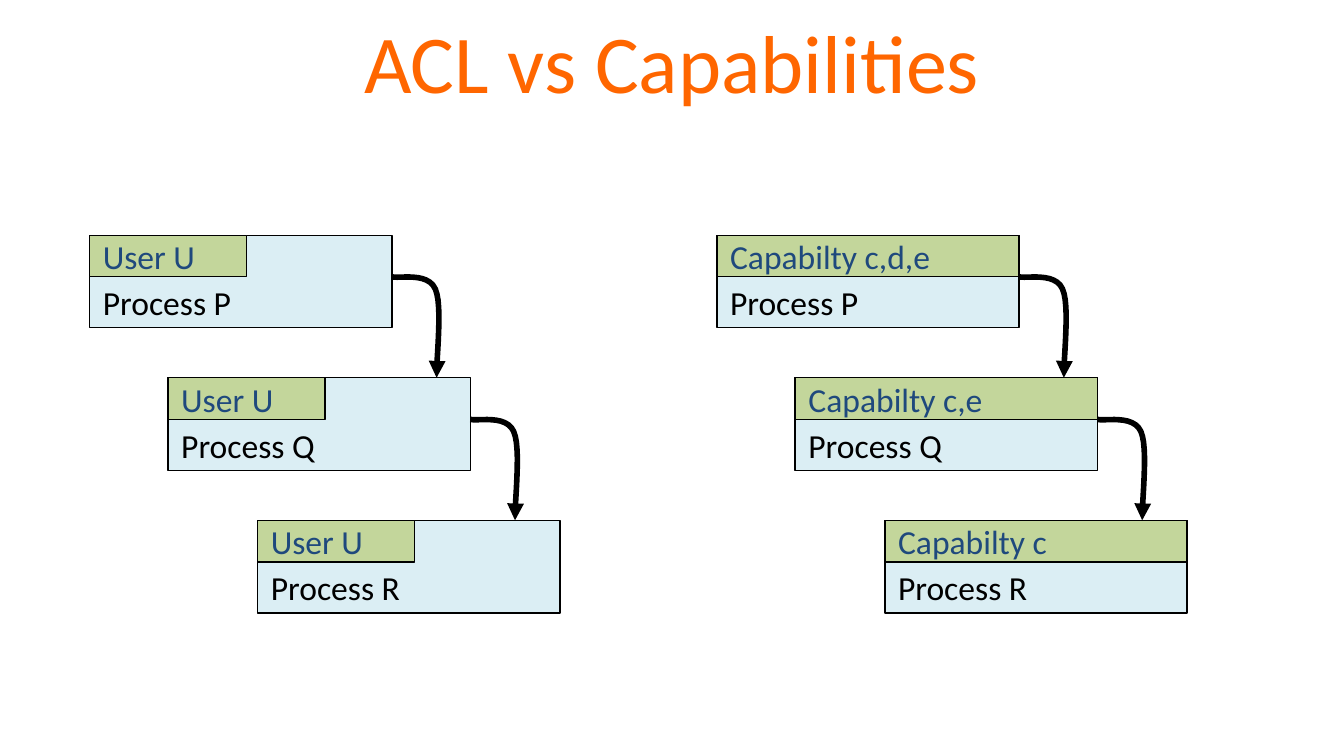
from collections import namedtuple
from lxml.etree import SubElement
from pptx import Presentation
from pptx.dml.color import RGBColor
from pptx.enum.shapes import MSO_SHAPE
from pptx.enum.text import MSO_ANCHOR, PP_ALIGN
from pptx.oxml.ns import qn
from pptx.util import Inches, Pt

ORANGE = RGBColor(0xFF, 0x66, 0x00)
PALE_BLUE = RGBColor(0xDB, 0xEE, 0xF4)
GREEN = RGBColor(0xC3, 0xD6, 0x9B)
NAVY = RGBColor(0x1F, 0x49, 0x7D)
BLACK = RGBColor(0, 0, 0)

Box = namedtuple("Box", "left top width height")
PAGE_WIDTH = 10
PAGE_HEIGHT = PAGE_WIDTH * 9 / 16
BLOCK_WIDTH, BLOCK_HEIGHT = 9 / 14, 0.245
HEADER_HEIGHT = 0.45
INDENTS = (0, 1 / 6, 5 / 14)
PROCESSES = ("Process P", "Process Q", "Process R")
ARROW_WIDTH = 0.095
ARROW_CURVES = (
    ((0, 0), (0.16, 0.02), (0.8, -0.05), (0.97, 0.12)),
    ((0.97, 0.12), (1.14, 0.28), (0.99, 0.81), (1, 1)),
)
CURVE_STEPS = 12


def part(box, left, top, width, height):
    return Box(box.left + left * box.width, box.top + top * box.height,
               width * box.width, height * box.height)


def lengths(box):
    return [Inches(value) for value in box]


def write(shape, text, size, color, align, anchor):
    frame = shape.text_frame
    frame.text = text
    frame.vertical_anchor = anchor
    para = frame.paragraphs[0]
    para.alignment = align
    span = para.runs[0]
    span.font.name = "Calibri"
    span.font.size = Pt(size)
    span.font.color.rgb = color


def add_title(page, box):
    title = page.shapes.add_textbox(*lengths(box))
    title.text_frame.word_wrap = True
    write(title, "ACL vs Capabilities", 44, ORANGE, PP_ALIGN.CENTER, MSO_ANCHOR.MIDDLE)


def add_panel(page, box, text, fill, color, anchor):
    panel = page.shapes.add_shape(MSO_SHAPE.RECTANGLE, *lengths(box))
    panel.shadow.inherit = False
    panel.fill.solid()
    panel.fill.fore_color.rgb = fill
    panel.line.color.rgb = BLACK
    panel.line.width = Pt(0.75)
    panel.text_frame.margin_bottom = Inches(0.04)
    panel.text_frame.margin_top = Inches(0.04)
    write(panel, text, 18, color, PP_ALIGN.LEFT, anchor)
    return panel


def add_block(page, box, process, header, header_width):
    add_panel(page, box, process, PALE_BLUE, BLACK, MSO_ANCHOR.BOTTOM)
    label = add_panel(page, part(box, 0, 0, header_width, HEADER_HEIGHT),
                      header, GREEN, NAVY, MSO_ANCHOR.MIDDLE)
    label.text_frame.word_wrap = False


def curve_point(curve, t):
    weights = ((1 - t) ** 3, 3 * t * (1 - t) ** 2, 3 * t * t * (1 - t), t ** 3)
    return [sum(weight * point[axis] for weight, point in zip(weights, curve))
            for axis in (0, 1)]


def add_arrow(page, box):
    shares = [curve_point(curve, step / CURVE_STEPS)
              for curve in ARROW_CURVES for step in range(1, CURVE_STEPS + 1)]
    points = [(Inches(box.left + x * box.width), Inches(box.top + y * box.height))
              for x, y in shares]
    builder = page.shapes.build_freeform(Inches(box.left), Inches(box.top))
    builder.add_line_segments(points, close=False)
    arrow = builder.convert_to_shape()
    arrow.shadow.inherit = False
    arrow.fill.background()
    arrow.line.color.rgb = BLACK
    arrow.line.width = Pt(3)
    SubElement(arrow.line._get_or_add_ln(), qn("a:tailEnd"), type="triangle")


def add_chain(page, box, headers, header_width):
    row_step = (1 - BLOCK_HEIGHT) / (len(PROCESSES) - 1)
    arrow_top = HEADER_HEIGHT * BLOCK_HEIGHT
    for row, (indent, process, header) in enumerate(zip(INDENTS, PROCESSES, headers)):
        top = row * row_step
        add_block(page, part(box, indent, top, BLOCK_WIDTH, BLOCK_HEIGHT),
                  process, header, header_width)
        if row < len(PROCESSES) - 1:
            add_arrow(page, part(box, indent + BLOCK_WIDTH, top + arrow_top,
                                 ARROW_WIDTH, row_step - arrow_top))


def main():
    deck = Presentation()
    deck.slide_width = Inches(PAGE_WIDTH)
    deck.slide_height = Inches(PAGE_HEIGHT)
    page = deck.slides.add_slide(deck.slide_layouts[6])
    add_title(page, Box(0.5, -0.02, 9, 0.94))
    chain_width = PAGE_WIDTH * 0.35
    add_chain(page, Box(PAGE_WIDTH / 15, 1.75, chain_width, 2.81), ("User U",) * 3, 0.52)
    add_chain(page, Box(PAGE_WIDTH * 8 / 15, 1.75, chain_width, 2.81),
              ("Capabilty c,d,e", "Capabilty c,e", "Capabilty c"), 1)
    deck.save("out.pptx")


if __name__ == "__main__":
    main()
